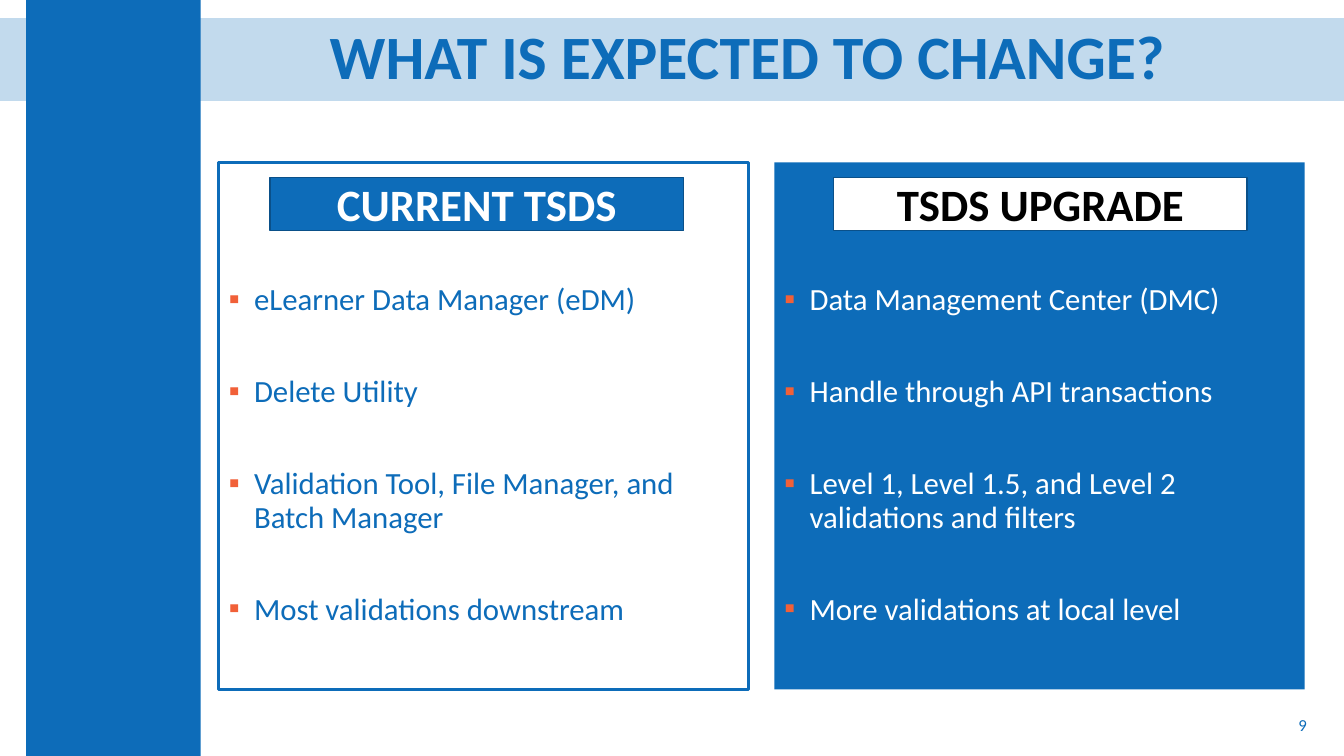
from lxml import etree
from pptx import Presentation
from pptx.dml.color import RGBColor
from pptx.enum.shapes import MSO_SHAPE
from pptx.enum.text import MSO_ANCHOR, MSO_AUTO_SIZE, PP_ALIGN
from pptx.oxml.ns import qn
from pptx.util import Inches, Pt

RECT = MSO_SHAPE.RECTANGLE
MIDDLE, TOP = MSO_ANCHOR.MIDDLE, MSO_ANCHOR.TOP
NO_FIT = MSO_AUTO_SIZE.NONE
LEFT, CENTER, RIGHT = PP_ALIGN.LEFT, PP_ALIGN.CENTER, PP_ALIGN.RIGHT
FONT = "Calibri"
COLORS = {"blue": "0D6CB9", "edge": "0A5089", "orange": "F16038",
          "white": "FFFFFF", "black": "000000"}
CURRENT = ["eLearner Data Manager (eDM)", "Delete Utility",
           "Validation Tool, File Manager, and Batch Manager",
           "Most validations downstream"]
UPGRADE = ["Data Management Center (DMC)", "Handle through API transactions",
           "Level 1, Level 1.5, and Level 2 validations and filters",
           "More validations at local level"]


def rgb(name):
    """Return the named colour."""
    return RGBColor.from_string(COLORS[name])


def place(sp, x, y, w, h):
    """Move and size a shape, in inches."""
    sp.left, sp.top, sp.width, sp.height = (Inches(v) for v in (x, y, w, h))


def write(p, text, size, color, bold=False, align=LEFT):
    """Add one formatted run to a paragraph."""
    p.alignment = align
    r = p.add_run()
    r.text = text
    r.font.name, r.font.size, r.font.bold = FONT, Pt(size), bold
    r.font.color.rgb = rgb(color)


def add_rect(s, x, y, w, h, fill, edge=None):
    """Add a flat rectangle, outlined when an edge colour is given."""
    sp = s.shapes.add_shape(RECT, *(Inches(v) for v in (x, y, w, h)))
    sp.shadow.inherit = False
    sp.fill.solid()
    sp.fill.fore_color.rgb = rgb(fill)
    if edge:
        sp.line.color.rgb = rgb(edge)
        sp.line.width = Pt(1)
    else:
        sp.line.fill.background()
    return sp


def add_backdrop(s, w, h):
    """Draw the pale title band and the side bar behind everything else."""
    band = add_rect(s, 0, 0.18, w, 0.82, "blue")
    color = band.fill._xPr.find(".//" + qn("a:srgbClr"))
    etree.SubElement(color, qn("a:alpha"), val="25000")
    bar = add_rect(s, 0.26, 0, 1.73, h, "blue")
    for i, sp in enumerate((band, bar)):
        s.shapes.element.insert(2 + i, sp.element)


def add_title(s, x, y, w, h, text):
    """Fill the title placeholder."""
    sp = s.shapes.title
    place(sp, x, y, w, h)
    tf = sp.text_frame
    tf.auto_size, tf.vertical_anchor = NO_FIT, MIDDLE
    tf.paragraphs[0].line_spacing = 0.9
    write(tf.paragraphs[0], text, 44, "blue", True, CENTER)


def add_bullet(p):
    """Give a paragraph a small orange square and a hanging indent."""
    pPr = p._p.get_or_add_pPr()
    pPr.set("marL", str(Inches(0.25)))
    pPr.set("indent", str(-Inches(0.25)))
    clr = etree.SubElement(pPr, qn("a:buClr"))
    etree.SubElement(clr, qn("a:srgbClr"), val=COLORS["orange"])
    etree.SubElement(pPr, qn("a:buFont"), typeface=FONT)
    etree.SubElement(pPr, qn("a:buChar"), char="▪")


def add_panel(s, sp, x, y, w, h, items, color, fill=None):
    """Fill a body placeholder with a bulleted list."""
    place(sp, x, y, w, h)
    if fill:
        sp.fill.solid()
        sp.fill.fore_color.rgb = rgb(fill)
    else:
        sp.line.color.rgb = rgb("blue")
        sp.line.width = Pt(2.25)
    tf = sp.text_frame
    tf.auto_size, tf.vertical_anchor = NO_FIT, TOP
    tf.margin_top = Inches(1.21)
    for i, item in enumerate(items):
        p = tf.add_paragraph() if i else tf.paragraphs[0]
        p.line_spacing = 0.9
        p.space_before = Pt(42 if i else 0)
        add_bullet(p)
        write(p, item, 22, color)


def add_heading(s, x, y, text, fill, color):
    """Add the boxed heading of a panel."""
    sp = add_rect(s, x, y, 4.1, 0.53, fill, "edge")
    tf = sp.text_frame
    tf.word_wrap, tf.vertical_anchor = True, MIDDLE
    write(tf.paragraphs[0], text, 32, color, True, CENTER)


def add_number(s, x, y, w, h, text):
    """Add the page number."""
    sp = s.shapes.add_textbox(*(Inches(v) for v in (x, y, w, h)))
    tf = sp.text_frame
    tf.word_wrap, tf.vertical_anchor = True, MIDDLE
    write(tf.paragraphs[0], text, 12, "blue", align=RIGHT)


def main():
    """Build and save the slide."""
    prs = Presentation()
    prs.slide_width, prs.slide_height = Inches(13.33), Inches(7.5)
    s = prs.slides.add_slide(prs.slide_layouts[3])
    add_backdrop(s, 13.33, 7.5)
    add_title(s, 2.42, 0.28, 9.99, 0.63, "WHAT IS EXPECTED TO CHANGE?")
    current, upgrade = s.placeholders[1], s.placeholders[2]
    add_panel(s, current, 2.17, 1.61, 5.25, 5.23, CURRENT, "blue")
    add_panel(s, upgrade, 7.68, 1.61, 5.26, 5.23, UPGRADE, "white", "blue")
    add_heading(s, 2.68, 1.76, "CURRENT TSDS", "blue", "white")
    add_heading(s, 8.27, 1.76, "TSDS UPGRADE", "white", "black")
    add_number(s, 10.06, 6.99, 3, 0.4, "9")
    prs.save("out.pptx")


if __name__ == "__main__":
    main()
